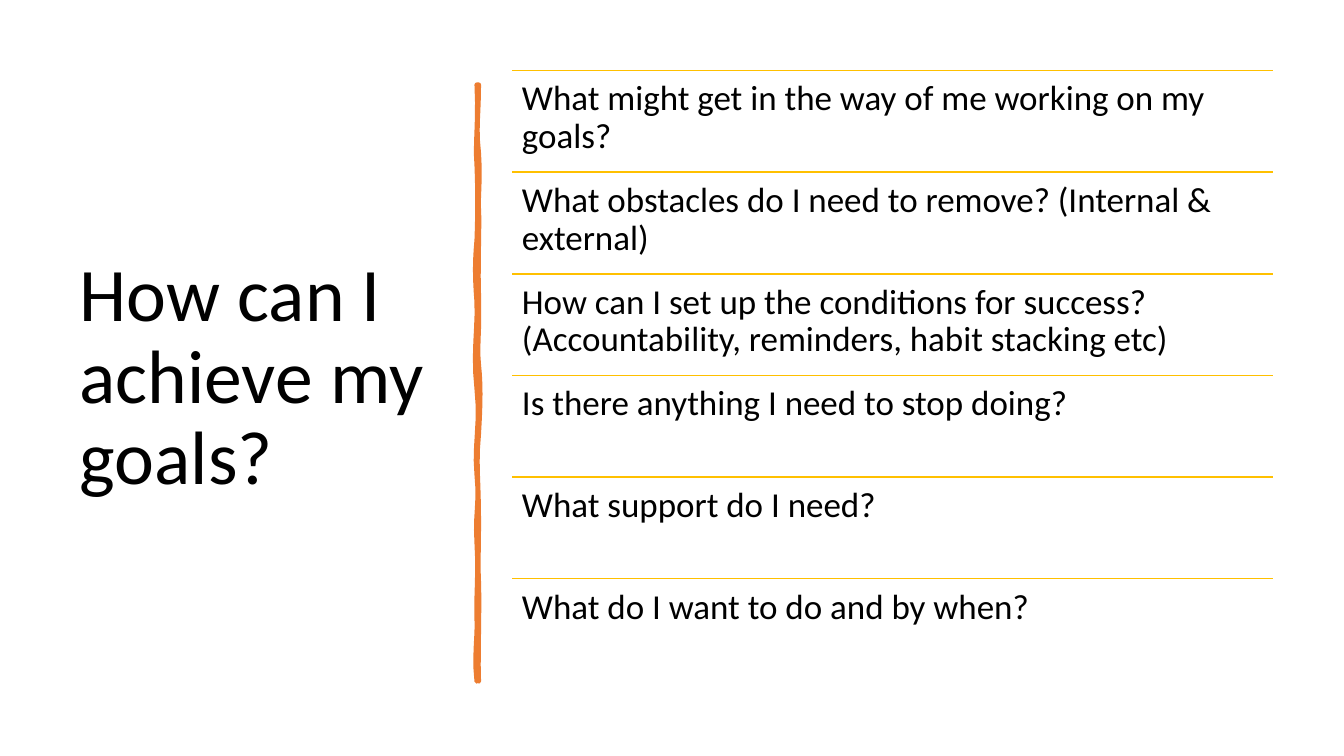
import pptx
import pptx.util
import pptx.dml.color
import pptx.enum.shapes
import pptx.enum.text
import pptx.oxml.ns
import lxml.etree

Inches = pptx.util.Inches

QUESTIONS = [
    "What might get in the way of me working on my goals?",
    "What obstacles do I need to remove? (Internal & external)",
    "How can I set up the conditions for success? "
    "(Accountability, reminders, habit stacking etc)",
    "Is there anything I need to stop doing?",
    "What support do I need?",
    "What do I want to do and by when?",
]
LIST_LEFT, LIST_TOP, LIST_WIDTH = 5.08, 0.7, 7.55
ROW_HEIGHT = 6.05 / len(QUESTIONS)

# Each curve of the brush stroke: two control points and an end point.
STROKE_START = (4.75, 0.84)
STROKE_CURVES = [
    ((4.75, 1.15), (4.72, 1.25), (4.75, 1.52)),
    ((4.77, 1.79), (4.74, 1.97), (4.75, 2.08)),
    ((4.76, 2.2), (4.74, 2.55), (4.75, 2.94)),
    ((4.76, 3.33), (4.73, 3.43), (4.75, 3.62)),
    ((4.77, 3.81), (4.77, 3.97), (4.75, 4.3)),
    ((4.72, 4.63), (4.75, 4.74), (4.75, 5.16)),
    ((4.75, 5.57), (4.74, 5.53), (4.75, 5.78)),
    ((4.76, 6.03), (4.74, 6.47), (4.75, 6.76)),
    ((4.74, 6.75), (4.73, 6.75), (4.73, 6.76)),
    ((4.7, 6.49), (4.74, 6.32), (4.73, 6.13)),
    ((4.72, 5.95), (4.75, 5.69), (4.73, 5.39)),
    ((4.71, 5.1), (4.76, 5), (4.73, 4.71)),
    ((4.7, 4.42), (4.77, 4.2), (4.73, 3.86)),
    ((4.69, 3.51), (4.74, 3.25), (4.73, 3)),
    ((4.71, 2.75), (4.71, 2.59), (4.73, 2.38)),
    ((4.74, 2.16), (4.74, 1.85), (4.73, 1.64)),
    ((4.71, 1.43), (4.75, 1.21), (4.73, 0.84)),
]
STEPS = 6


def color(hex_code):
    return pptx.dml.color.RGBColor.from_string(hex_code)


def format_text(frame, size):
    frame.word_wrap = True
    frame.auto_size = pptx.enum.text.MSO_AUTO_SIZE.NONE
    para = frame.paragraphs[0]
    para.alignment = pptx.enum.text.PP_ALIGN.LEFT
    para.line_spacing = 0.9
    font = para.runs[0].font
    font.name = "Calibri"
    font.size = pptx.util.Pt(size)
    font.color.rgb = color("000000")


deck = pptx.Presentation()
deck.slide_width = Inches(13.333)
deck.slide_height = Inches(7.5)
page = deck.slides.add_slide(deck.slide_layouts[5])

title = page.shapes.title
title.left, title.top = Inches(0.69), Inches(0.7)
title.width, title.height = Inches(3.74), Inches(6.11)
title.text_frame.text = "How can I achieve my goals?"
title.text_frame.vertical_anchor = pptx.enum.text.MSO_ANCHOR.MIDDLE
format_text(title.text_frame, 54)

points = []
start = STROKE_START
for first, second, end in STROKE_CURVES:
    for step in range(1, STEPS + 1):
        t = step / STEPS
        u = 1 - t
        points.append(tuple(
            Inches(u**3 * a + 3 * u * u * t * b + 3 * u * t * t * c + t**3 * d)
            for a, b, c, d in zip(start, first, second, end)
        ))
    start = end
builder = page.shapes.build_freeform(*(Inches(v) for v in STROKE_START))
builder.add_line_segments(points, close=True)
stroke = builder.convert_to_shape()
stroke.shadow.inherit = False
stroke.fill.solid()
stroke.fill.fore_color.rgb = color("ED7D31")
stroke.line.color.rgb = color("ED7D31")
stroke.line.width = pptx.util.Pt(3.25)
outline = stroke.line.fill._xPr
lxml.etree.SubElement(outline, pptx.oxml.ns.qn("a:round"))

for row, question in enumerate(QUESTIONS):
    top = Inches(LIST_TOP + row * ROW_HEIGHT)
    rule = page.shapes.add_connector(
        pptx.enum.shapes.MSO_CONNECTOR.STRAIGHT,
        Inches(LIST_LEFT), top, Inches(LIST_LEFT + LIST_WIDTH), top)
    rule.line.color.rgb = color("FFC000")
    rule.line.width = pptx.util.Pt(1)
    lxml.etree.SubElement(rule._element.spPr, pptx.oxml.ns.qn("a:effectLst"))

    box = page.shapes.add_textbox(
        Inches(LIST_LEFT), top, Inches(LIST_WIDTH), Inches(ROW_HEIGHT))
    frame = box.text_frame
    frame.text = question
    frame.margin_left = frame.margin_right = Inches(0.1)
    frame.margin_top = frame.margin_bottom = Inches(0.1)
    format_text(frame, 25)

deck.save("out.pptx")
